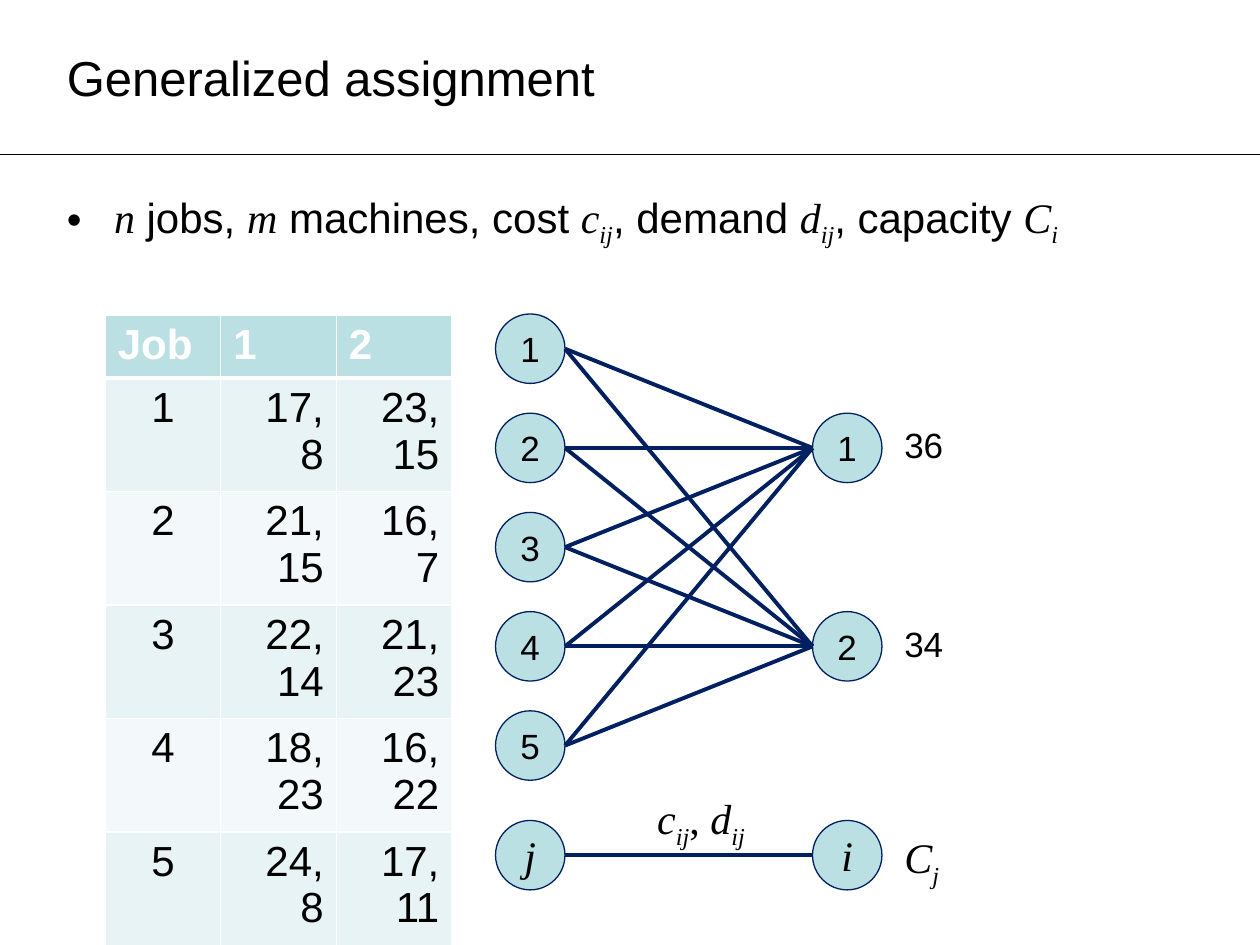
from dataclasses import dataclass
from itertools import product

from lxml.etree import SubElement
from pptx import Presentation
from pptx.dml.color import RGBColor
from pptx.enum.shapes import MSO_CONNECTOR, MSO_SHAPE
from pptx.enum.text import MSO_ANCHOR, PP_ALIGN
from pptx.oxml.ns import qn
from pptx.util import Cm, Pt

BLACK = RGBColor(0x00, 0x00, 0x00)
WHITE = RGBColor(0xFF, 0xFF, 0xFF)
NAVY = RGBColor(0x00, 0x20, 0x60)
TEAL = RGBColor(0xBB, 0xE0, 0xE3)
BAND_DARK = RGBColor(0xE7, 0xF3, 0xF4)
BAND_LIGHT = RGBColor(0xF3, 0xF9, 0xFA)
SANS, SERIF = "Arial", "Times New Roman"

# Graph geometry in centimetres
DIAMETER = 1.4
PITCH = 2.0
JOB_X, MACHINE_X, CAPACITY_X = 9.99, 16.38, 17.98
GRAPH_TOP, LEGEND_TOP = 6.33, 16.54

COSTS = [
    ("Job", "1", "2"),
    ("1", "17, 8", "23, 15"),
    ("2", "21, 15", "16, 7"),
    ("3", "22, 14", "21, 23"),
    ("4", "18, 23", "16, 22"),
    ("5", "24, 8", "17, 11"),
]


@dataclass(frozen=True)
class Run:
    text: str
    font: str = SANS
    italic: bool = False
    sub: bool = False


@dataclass(frozen=True)
class Node:
    run: Run
    x: float
    y: float
    size: int = 20

    @property
    def middle(self) -> float:
        return self.y + DIAMETER / 2


def symbol(name: str, index: str = "") -> list[Run]:
    """Italic variable, with an optional subscript."""
    runs = [Run(name, SERIF, True)]
    return runs + [Run(index, SERIF, True, True)] if index else runs


def write(tf, runs: list[Run], size=20, color=BLACK, bold=False,
          align=PP_ALIGN.LEFT):
    p = tf.paragraphs[0]
    p.alignment = align
    for run in runs:
        r = p.add_run()
        r.text = run.text
        r.font.name, r.font.size = run.font, Pt(size)
        r.font.bold, r.font.italic = bold, run.italic
        r.font.color.rgb = color
        if run.sub:
            r._r.get_or_add_rPr().set("baseline", "-25000")
    return p


def add_text(slide, x: float, y: float, w: float, h: float, runs: list[Run],
             wrap=False, anchor=MSO_ANCHOR.TOP, **fmt):
    tf = slide.shapes.add_textbox(Cm(x), Cm(y), Cm(w), Cm(h)).text_frame
    tf.word_wrap = wrap
    tf.vertical_anchor = anchor
    return write(tf, runs, **fmt)


def add_line(slide, x1: float, y1: float, x2: float, y2: float,
             color=NAVY, width=2.25) -> None:
    line = slide.shapes.add_connector(
        MSO_CONNECTOR.STRAIGHT, Cm(x1), Cm(y1), Cm(x2), Cm(y2))
    line.line.color.rgb = color
    line.line.width = Pt(width)
    SubElement(line._element.spPr, qn("a:effectLst"))


def add_node(slide, node: Node) -> None:
    sp = slide.shapes.add_shape(
        MSO_SHAPE.OVAL, Cm(node.x), Cm(node.y), Cm(DIAMETER), Cm(DIAMETER))
    sp.shadow.inherit = False
    sp.fill.solid()
    sp.fill.fore_color.rgb = TEAL
    sp.line.color.rgb = NAVY
    sp.line.width = Pt(0.75)
    tf = sp.text_frame
    tf.vertical_anchor = MSO_ANCHOR.MIDDLE
    tf.margin_left = tf.margin_right = 0
    write(tf, [node.run], size=node.size, align=PP_ALIGN.CENTER)


def join_nodes(slide, job: Node, machine: Node) -> None:
    add_line(slide, job.x + DIAMETER, job.middle, machine.x, machine.middle)


def add_bullet(p) -> None:
    pPr = p._p.get_or_add_pPr()
    pPr.set("marL", str(Cm(0.95)))
    pPr.set("indent", str(-Cm(0.95)))
    SubElement(pPr, qn("a:buFont"), typeface=SANS)
    SubElement(pPr, qn("a:buChar"), char="•")


def set_borders(cell, bottom: float) -> None:
    tcPr = cell._tc.get_or_add_tcPr()
    for side, width in (("L", 1), ("R", 1), ("T", 1), ("B", bottom)):
        ln = SubElement(tcPr, qn(f"a:ln{side}"), w=str(Pt(width)))
        fill = SubElement(ln, qn("a:solidFill"))
        SubElement(fill, qn("a:srgbClr"), val=str(WHITE))


def add_cost_table(slide) -> None:
    rows, cols = len(COSTS), len(COSTS[0])
    table = slide.shapes.add_table(
        rows, cols, Cm(2.12), Cm(6.35), Cm(7.0), Cm(6.18)).table
    for column in table.columns:
        column.width = Cm(2.33)
    for i, j in product(range(rows), range(cols)):
        cell = table.cell(i, j)
        header = i == 0
        set_borders(cell, 3 if header else 1)
        cell.fill.solid()
        if header:
            fill, align = TEAL, PP_ALIGN.LEFT
        else:
            fill = BAND_DARK if i % 2 else BAND_LIGHT
            align = PP_ALIGN.RIGHT if j else PP_ALIGN.CENTER
        cell.fill.fore_color.rgb = fill
        write(cell.text_frame, [Run(COSTS[i][j])], size=24, bold=header,
              color=WHITE if header else BLACK, align=align)


def add_graph(slide) -> None:
    jobs = [Node(Run(str(k + 1)), JOB_X, GRAPH_TOP + k * PITCH)
            for k in range(5)]
    machines = [Node(Run(str(k + 1)), MACHINE_X, GRAPH_TOP + (2 * k + 1) * PITCH)
                for k in range(2)]
    for node in jobs + machines:
        add_node(slide, node)
    for machine, job in product(machines, jobs):
        join_nodes(slide, job, machine)
    for machine, capacity in zip(machines, ("36", "34")):
        add_text(slide, CAPACITY_X, machine.y + 0.09, 1.3, 1.11, [Run(capacity)])


def add_legend(slide) -> None:
    job = Node(Run("j", SERIF, True), JOB_X, LEGEND_TOP, 24)
    machine = Node(Run("i", SERIF, True), MACHINE_X, LEGEND_TOP, 24)
    add_node(slide, job)
    add_node(slide, machine)
    join_nodes(slide, job, machine)
    add_text(slide, CAPACITY_X, 16.64, 1.25, 1.28, symbol("C", "j"), size=24)
    add_text(slide, 13.0, 15.86, 2.39, 1.28,
             symbol("c", "ij") + [Run(", ", SERIF)] + symbol("d", "ij"), size=24)


def main() -> None:
    prs = Presentation()
    prs.slide_width, prs.slide_height = Cm(25.4), Cm(19.05)
    slide = prs.slides.add_slide(prs.slide_layouts[6])

    add_line(slide, 0, 3.12, 25.4, 3.12, color=BLACK, width=0.75)
    add_text(slide, 1.1, 0.18, 23.2, 2.75, [Run("Generalized assignment")],
             wrap=True, anchor=MSO_ANCHOR.MIDDLE, size=28)
    statement = (
        symbol("n") + [Run(" jobs, ")]
        + symbol("m") + [Run(" machines, cost ")]
        + symbol("c", "ij") + [Run(", demand ")]
        + symbol("d", "ij") + [Run(", capacity ")]
        + symbol("C", "i"))
    add_bullet(add_text(slide, 1.1, 3.73, 23.2, 14.94, statement,
                        wrap=True, size=24))
    add_graph(slide)
    add_legend(slide)
    add_cost_table(slide)
    prs.save("out.pptx")


if __name__ == "__main__":
    main()
